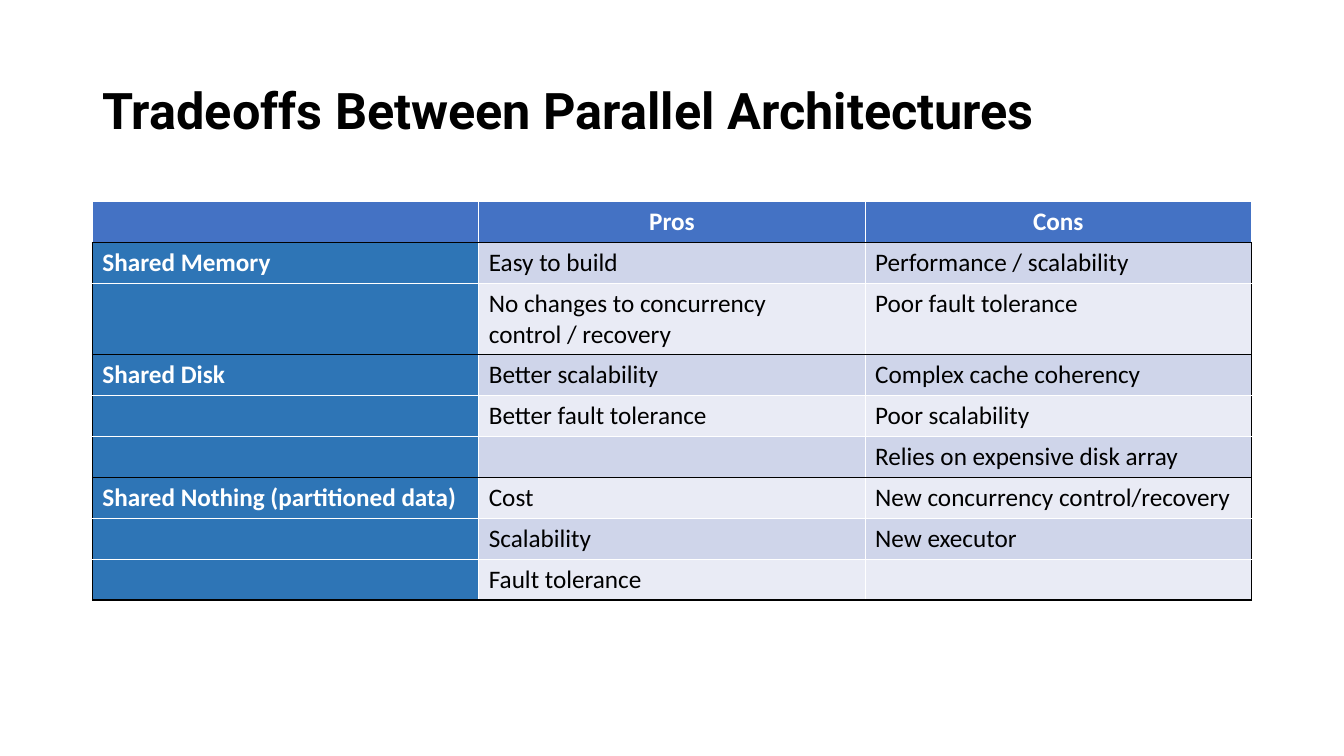
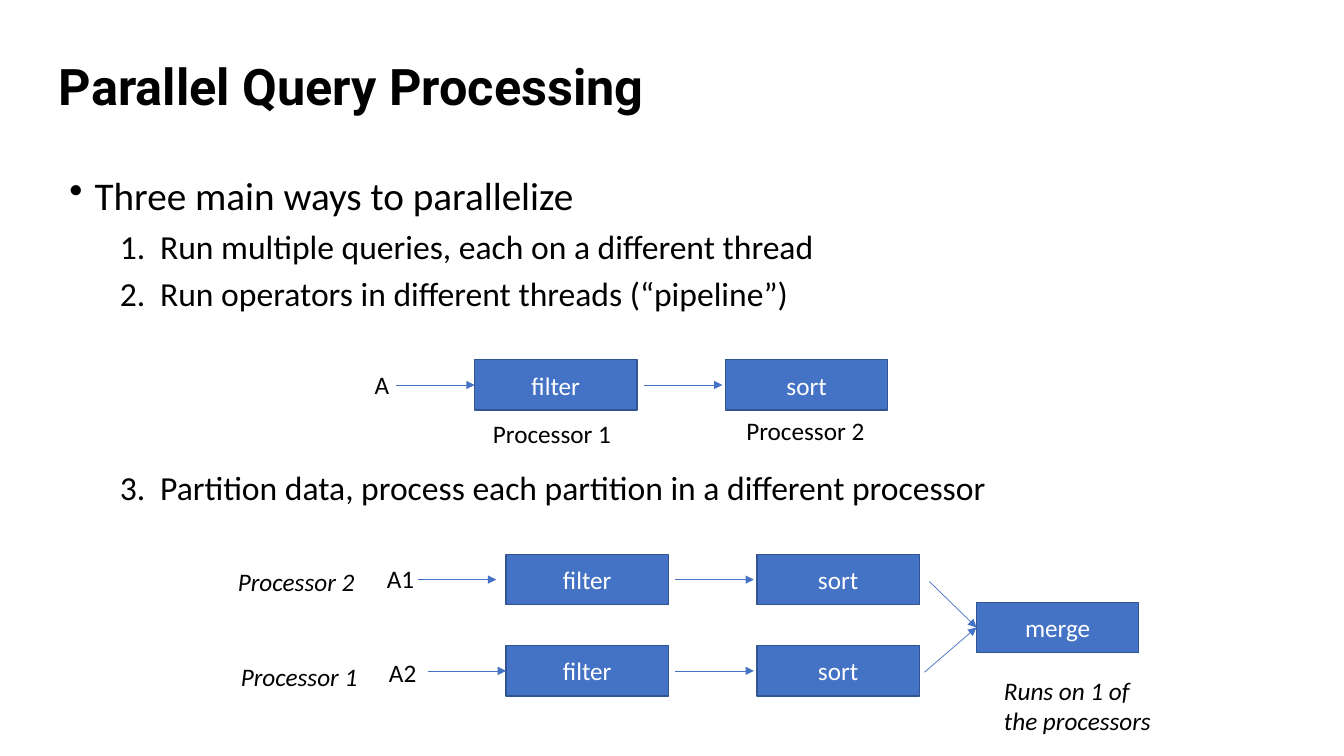
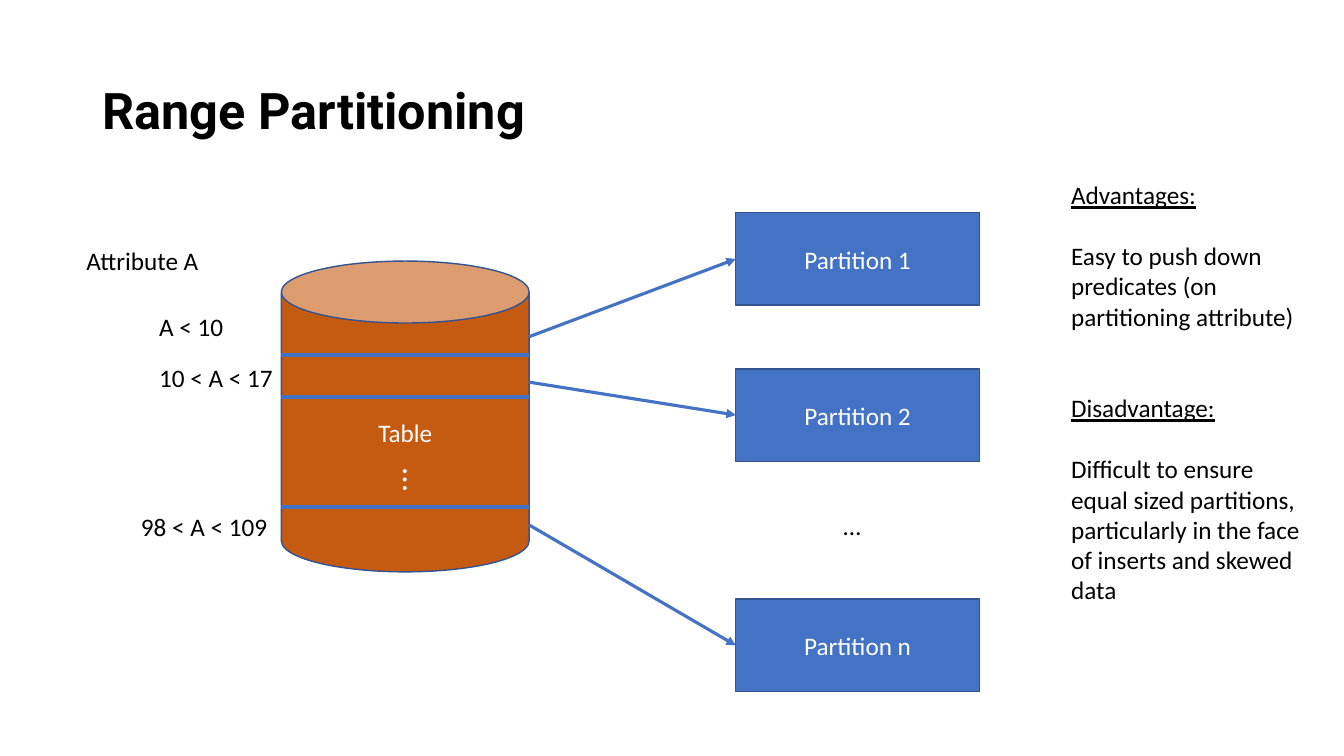
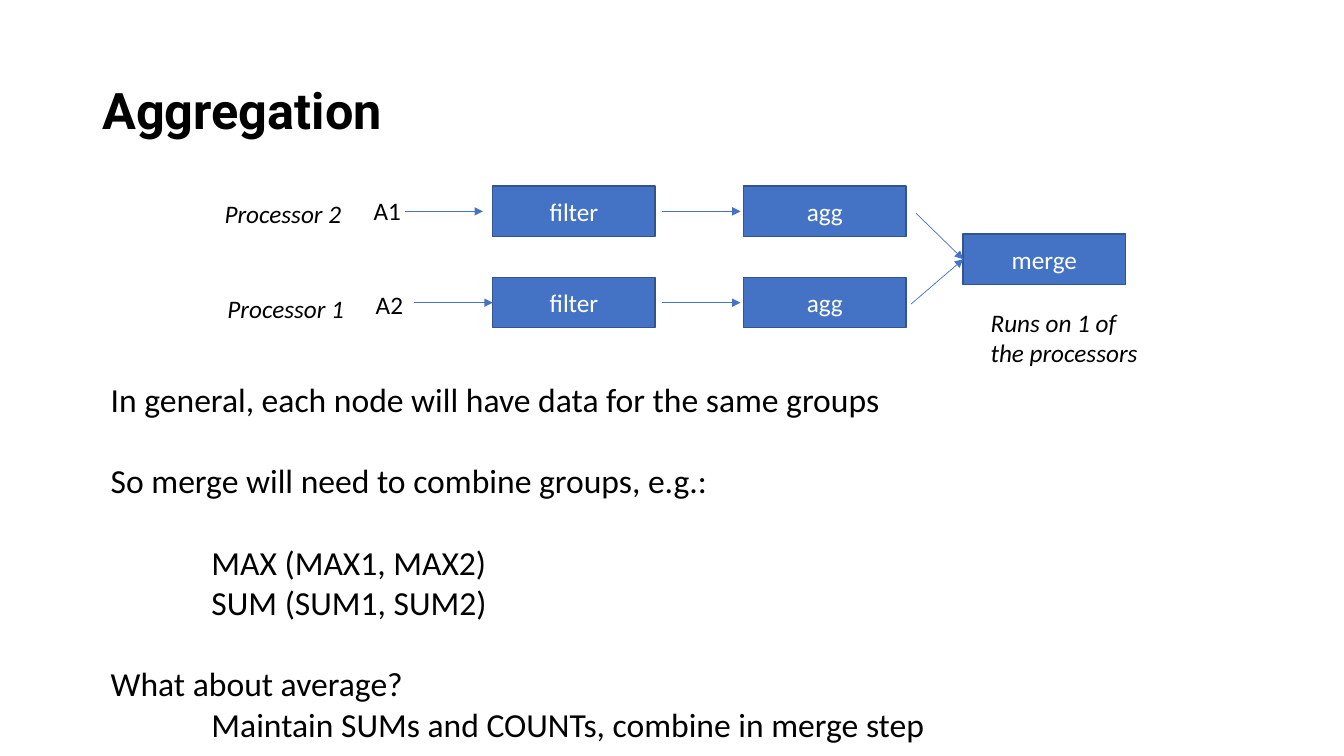
from lxml import etree
from pptx import Presentation
from pptx.dml.color import RGBColor
from pptx.enum.shapes import MSO_CONNECTOR, MSO_SHAPE
from pptx.enum.text import MSO_ANCHOR, PP_ALIGN
from pptx.oxml.ns import qn
from pptx.util import Pt

RECT, CAN = MSO_SHAPE.RECTANGLE, MSO_SHAPE.CAN
STRAIGHT = MSO_CONNECTOR.STRAIGHT
TOP, MIDDLE = MSO_ANCHOR.TOP, MSO_ANCHOR.MIDDLE
LEFT, CENTER = PP_ALIGN.LEFT, PP_ALIGN.CENTER
LEFT_SIDE = 1

BLACK, WHITE = "000000", "FFFFFF"
BLUE, OUTLINE, ORANGE = "4472C4", "325491", "C55A11"
ROW_HEAD, BAND_DARK, BAND_LIGHT = "2E75B6", "CFD5EA", "E9EBF5"
BODY_FONT, TITLE_FONT = "Calibri", "Roboto"

BOX_W, BOX_H = 116, 36
LABEL_H = 29


def rgb(color):
    return RGBColor.from_string(color)


def add_xml(parent, tag, **attrs):
    return etree.SubElement(parent, qn(tag), attrs)


class Deck:
    """The presentation, its style and the slide being filled."""

    def __init__(self):
        self.prs = Presentation()
        self.prs.slide_width, self.prs.slide_height = Pt(960), Pt(540)
        self.s = None

    def slide(self, title, x=66, y=29):
        self.s = self.prs.slides.add_slide(self.prs.slide_layouts[6])
        self.text(x, y, 828, 104, title, size=36, font=TITLE_FONT, bold=True,
                  spacing=0.9, anchor=MIDDLE)

    def style(self, p, size=18, color=BLACK, font=BODY_FONT, bold=False,
              italic=False, underline=False, align=LEFT, before=0,
              spacing=None, margin=0, hang=0, bullet=None, number=None):
        """Format a paragraph; margin and hang place its text and its bullet."""
        pPr = p._p.get_or_add_pPr()
        if margin:
            pPr.set("marL", str(Pt(margin)))
            pPr.set("indent", str(Pt(-hang)))
        if bullet:
            add_xml(pPr, "a:buChar", char=bullet)
        if number:
            add_xml(pPr, "a:buAutoNum", type="arabicPeriod", startAt=str(number))
        p.alignment = align
        p.space_before = Pt(before)
        if spacing:
            p.line_spacing = spacing
        f = p.font
        f.name, f.size, f.bold, f.italic = font, Pt(size), bold, italic
        f.underline = underline
        f.color.rgb = rgb(color)

    def text(self, x, y, w, h, content, anchor=TOP, rotation=0, **style):
        """Add a text box; content is a string or (string, style) pairs."""
        sp = self.s.shapes.add_textbox(Pt(x), Pt(y), Pt(w), Pt(h))
        sp.rotation = rotation
        tf = sp.text_frame
        tf.word_wrap, tf.vertical_anchor = True, anchor
        paragraphs = [(content, {})] if isinstance(content, str) else content
        for i, (line, own) in enumerate(paragraphs):
            p = tf.add_paragraph() if i else tf.paragraphs[0]
            p.text = line
            self.style(p, **{**style, **own})

    def box(self, x, y, label, w=BOX_W, h=BOX_H, kind=RECT, fill=BLUE):
        sp = self.s.shapes.add_shape(kind, Pt(x), Pt(y), Pt(w), Pt(h))
        sp.shadow.inherit = False
        sp.fill.solid()
        sp.fill.fore_color.rgb = rgb(fill)
        sp.line.color.rgb, sp.line.width = rgb(OUTLINE), Pt(1)
        sp.text_frame.vertical_anchor = MIDDLE
        p = sp.text_frame.paragraphs[0]
        p.text = label
        self.style(p, color=WHITE, align=CENTER)
        return sp

    def line(self, x1, y1, x2, y2, width=0.5, arrow=True, target=None):
        """Draw a line; a target is joined at the middle of its left side."""
        c = self.s.shapes.add_connector(STRAIGHT, Pt(x1), Pt(y1), Pt(x2), Pt(y2))
        c.line.color.rgb, c.line.width = rgb(BLUE), Pt(width)
        if arrow:
            add_xml(c.line._get_or_add_ln(), "a:tailEnd", type="triangle")
        add_xml(c._element.spPr, "a:effectLst")
        if target is not None:
            c.end_connect(target, LEFT_SIDE)

    def cell(self, cell, label, fill, borders, **style):
        """Fill a table cell; borders are colours: left, right, top, bottom."""
        tcPr = cell._tc.get_or_add_tcPr()
        for side, color in zip("LRTB", borders):
            ln = add_xml(tcPr, "a:ln" + side, w=str(Pt(1)))
            add_xml(add_xml(ln, "a:solidFill"), "a:srgbClr", val=color)
        cell.fill.solid()
        cell.fill.fore_color.rgb = rgb(fill)
        p = cell.text_frame.paragraphs[0]
        p.text = label
        self.style(p, **style)

    def table(self, x, y, col_w, row_heights, header, groups):
        """Add a table whose groups of rows are framed in black."""
        t = self.s.shapes.add_table(
            len(row_heights), len(header), Pt(x), Pt(y),
            Pt(col_w * len(header)), Pt(sum(row_heights))).table
        for col in t.columns:
            col.width = Pt(col_w)
        for row, h in zip(t.rows, row_heights):
            row.height = Pt(h)
        for c, label in enumerate(header):
            self.cell(t.cell(0, c), label, BLUE, (WHITE, WHITE, WHITE, BLACK),
                      color=WHITE, bold=True, align=CENTER)
        r = 0
        for name, rows in groups:
            for i, row in enumerate(rows):
                r += 1
                top = WHITE if i else BLACK
                bottom = BLACK if i == len(rows) - 1 else WHITE
                band = BAND_DARK if r % 2 else BAND_LIGHT
                self.cell(t.cell(r, 0), "" if i else name, ROW_HEAD,
                          (BLACK, WHITE, top, bottom), color=WHITE, bold=True)
                for c, label in enumerate(row, 1):
                    right = BLACK if c == len(row) else WHITE
                    self.cell(t.cell(r, c), label, band,
                              (WHITE, right, top, bottom))

    def partitioned_plan(self, x, y, operator):
        """Two filter-operator rows feeding a merge; x, y is the first filter."""
        row_gap, mid = 65.2, BOX_H / 2
        merge = self.box(x + 336, y + 34.2, "merge")
        # processor, its offset, input, its offset, arrow start, arrow end, merge start
        rows = [
            ("Processor 2", -198.7, 5, "A1", -92.2, 2.9, -62.6, -7, 302.4, 19.4),
            ("Processor 1", -196.6, 72.7, "A2", -90.7, 69.8, -56, 0, 298.8, 84.2),
        ]
        for i, (name, nx, ny, data, dx, dy, start, end, mx, my) in enumerate(rows):
            top = y + i * row_gap
            self.text(x + nx, y + ny, 104, LABEL_H, name, italic=True)
            self.text(x + dx, y + dy, 45, LABEL_H, data)
            filter_box = self.box(x, top, "filter")
            self.box(x + 179.2, top, operator)
            self.line(x + start, top + mid, x + end, top + mid,
                      target=None if end else filter_box)
            self.line(x + 121, top + mid, x + 177, top + mid)
            self.line(x + mx, y + my, x + 336, y + 34.2 + mid, target=merge)
        self.text(x + 348.5, y + 82.8, 129, 51, "Runs on 1 of the processors",
                  italic=True)


def tradeoffs(d):
    d.slide("Tradeoffs Between Parallel Architectures")
    d.table(66, 144, 276, [29.2, 29.2, 51] + [29.2] * 6, ["", "Pros", "Cons"], [
        ("Shared Memory", [
            ("Easy to build", "Performance / scalability"),
            ("No changes to concurrency control / recovery",
             "Poor fault tolerance")]),
        ("Shared Disk", [
            ("Better scalability", "Complex cache coherency"),
            ("Better fault tolerance", "Poor scalability"),
            ("", "Relies on expensive disk array")]),
        ("Shared Nothing (partitioned data)", [
            ("Cost", "New concurrency control/recovery"),
            ("Scalability", "New executor"),
            ("Fault tolerance", "")]),
    ])


def query_processing(d):
    d.slide("Parallel Query Processing", 35, 12)
    item = dict(size=24, margin=64.8, hang=28.8)
    d.text(42.5, 119, 621, 126, [
        ("Three main ways to parallelize",
         dict(size=28, margin=18, hang=18, bullet="•")),
        ("Run multiple queries, each on a different thread",
         dict(item, before=5, number=1)),
        ("Run operators in different threads (“pipeline”)",
         dict(item, before=5, number=2)),
    ])
    d.text(42.5, 330, 721, 36,
           "Partition data, process each partition in a different processor",
           number=3, **item)

    y = 257
    mid = y + BOX_H / 2
    d.text(260.6, 260, 45, LABEL_H, "A")
    filter_box = d.box(339, y, "filter")
    d.box(518.2, y, "sort")
    d.line(283, mid, 339, mid, target=filter_box)
    d.line(460, mid, 516, mid)
    d.text(345, 295, 104, LABEL_H, "Processor 1")
    d.text(526, 293, 104, LABEL_H, "Processor 2")
    d.partitioned_plan(361.5, 396, "sort")


def range_partitioning(d):
    d.slide("Range Partitioning")
    left, right, box_x, box_h = 201, 378, 525.6, 66
    d.box(left, 186.5, "Table", right - left, 222, kind=CAN, fill=ORANGE)
    d.text(54.7, 172, 144, LABEL_H, "Attribute A")
    # partition, its top, arrow start, divider, range, its place
    for name, top, start, divider, bounds, x, y in [
        ("Partition 1", 152, 240.5, 253.5, "A < 10", 106.6, 219),
        ("Partition 2", 263.5, 273, 283.7, "10 < A < 17", 106.6, 255),
        ("Partition n", 428, 375, 362.2, "98 < A < 109", 93.6, 361.5),
    ]:
        sp = d.box(box_x, top, name, 174, box_h)
        d.line(right, start, box_x, top + box_h / 2, width=2.25, target=sp)
        d.line(left, divider, right, divider, width=3, arrow=False)
        d.text(x, y, 144, LABEL_H, bounds)
    d.text(595.4, 360.7, 104, LABEL_H, "…")
    d.text(245.5, 361.5, 104, 36, "…", size=24, color=WHITE, rotation=90)
    d.text(758, 124.6, 184.3, 356, [
        ("Advantages:", dict(underline=True)),
        ("Easy to push down predicates (on partitioning attribute)",
         dict(before=22)),
        ("Disadvantage:", dict(underline=True, before=44)),
        ("Difficult to ensure equal sized partitions, particularly in the "
         "face of inserts and skewed data", dict(before=22)),
    ])


def aggregation(d):
    d.slide("Aggregation")
    d.partitioned_plan(352, 133, "agg")
    gap = dict(before=29.3)
    d.text(72, 267, 870, 269, [
        ("In general, each node will have data for the same groups", {}),
        ("So merge will need to combine groups, e.g.:", gap),
        ("MAX (MAX1, MAX2)", dict(gap, margin=72)),
        ("SUM (SUM1, SUM2)", dict(margin=72)),
        ("What about average?", gap),
        ("Maintain SUMs and COUNTs, combine in merge step", dict(margin=72)),
    ], size=24)


def main():
    d = Deck()
    for build in (tradeoffs, query_processing, range_partitioning, aggregation):
        build(d)
    d.prs.save("out.pptx")


if __name__ == "__main__":
    main()
